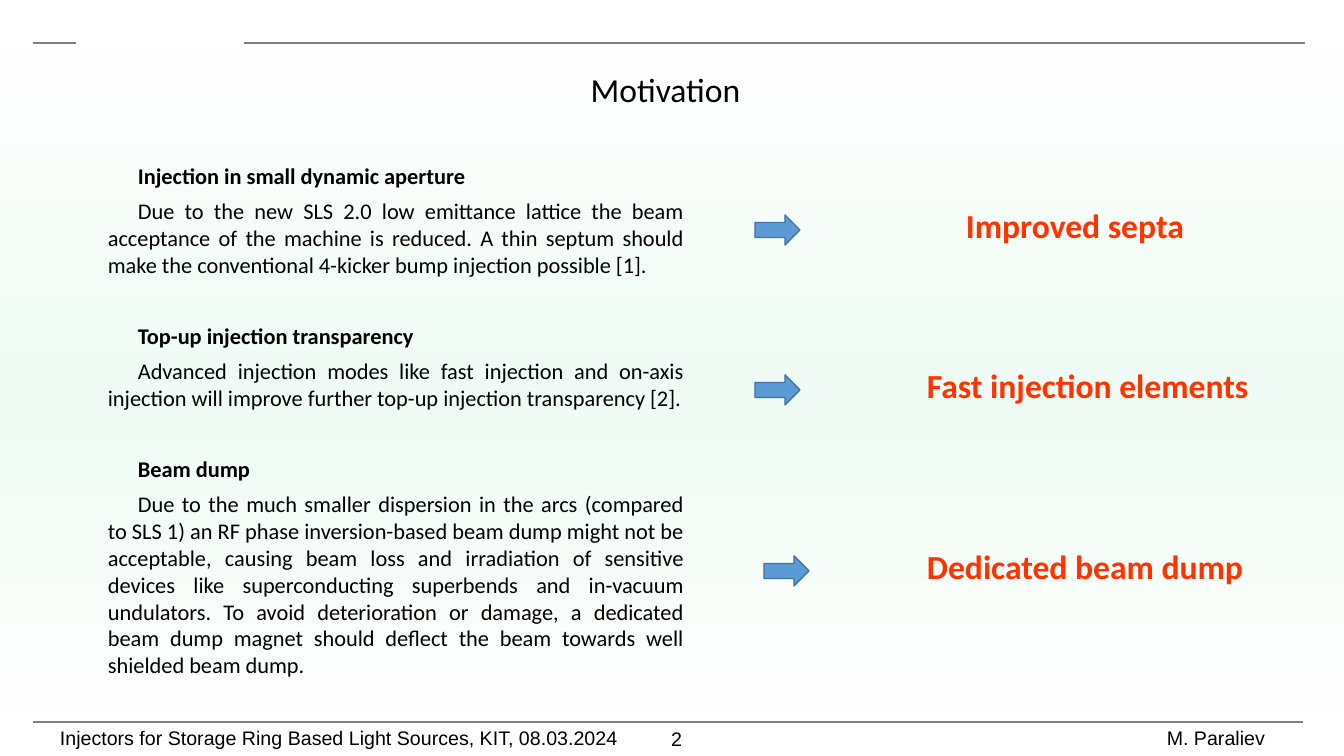
import copy

import pptx
import pptx.dml.color
import pptx.enum.shapes
import pptx.enum.text
import pptx.oxml
import pptx.oxml.ns
import pptx.util

SLIDE_WIDTH, SLIDE_HEIGHT = 1344, 756
EMU_PER_PX = 12192000 / SLIDE_WIDTH
INDENT = 30
SECTION_GAP = 31.5
PARAGRAPH_GAP = 6
ALIGN = pptx.enum.text.PP_ALIGN

SECTIONS = [
    ("Injection in small dynamic aperture",
     "Due to the new SLS 2.0 low emittance lattice the beam acceptance of the machine is reduced. "
     "A thin septum should make the conventional 4-kicker bump injection possible [1]."),
    ("Top-up injection transparency",
     "Advanced injection modes like fast injection and on-axis injection will improve further "
     "top-up injection transparency [2]."),
    ("Beam dump",
     "Due to the much smaller dispersion in the arcs (compared to SLS 1) an RF phase inversion-based "
     "beam dump might not be acceptable, causing beam loss and irradiation of sensitive devices like "
     "superconducting superbends and in-vacuum undulators. To avoid deterioration or damage, a "
     "dedicated beam dump magnet should deflect the beam towards well shielded beam dump."),
]
# Label, label left, arrow left, label top
SOLUTIONS = [
    ("Improved septa", 926, 755, 200),
    ("Fast injection elements", 887, 755, 360),
    ("Dedicated beam dump", 887, 764, 541),
]
RULES = [(33, 76, 43), (244, 1305, 43), (33, 1303, 722)]


def px(length):
    return pptx.util.Emu(round(length * EMU_PER_PX))


def color(hex_value):
    return pptx.dml.color.RGBColor.from_string(hex_value)


def set_background(slide, stops):
    """Fill the background from top to bottom with three (position, colour) stops."""
    fill = slide.background.fill
    fill.gradient()
    fill.gradient_angle = 270
    stop_list = slide.element.find(".//" + pptx.oxml.ns.qn("a:gsLst"))
    stop_list.append(copy.deepcopy(stop_list[0]))
    for stop, (position, hex_value) in zip(fill.gradient_stops, stops):
        stop.position = position
        stop.color.rgb = color(hex_value)


def add_text_box(slide, left, top, width, height):
    text_frame = slide.shapes.add_textbox(px(left), px(top), px(width), px(height)).text_frame
    text_frame.word_wrap = True
    return text_frame


def write(paragraph, text, size, font="Calibri", hex_value="000000", bold=False,
          align=ALIGN.LEFT, indent=0, space_before=0):
    paragraph.alignment = align
    paragraph.space_before = pptx.util.Pt(space_before)
    if indent:
        paragraph._p.get_or_add_pPr().set("indent", str(px(indent)))
    run = paragraph.add_run()
    run.text = text
    run.font.name = font
    run.font.size = pptx.util.Pt(size)
    run.font.bold = bold
    run.font.color.rgb = color(hex_value)


def add_text(slide, left, top, width, height, text, size, **text_format):
    text_frame = add_text_box(slide, left, top, width, height)
    write(text_frame.paragraphs[0], text, size, **text_format)


def add_sections(slide):
    text_frame = add_text_box(slide, 98, 157, 596, 531)
    body_format = {"size": 16, "align": ALIGN.JUSTIFY, "indent": INDENT}
    for index, (heading, body) in enumerate(SECTIONS):
        paragraph = text_frame.add_paragraph() if index else text_frame.paragraphs[0]
        write(paragraph, heading, bold=True, space_before=SECTION_GAP if index else 0, **body_format)
        write(text_frame.add_paragraph(), body, space_before=PARAGRAPH_GAP, **body_format)


def add_rule(slide, start, end, y):
    connector = slide.shapes.add_connector(
        pptx.enum.shapes.MSO_CONNECTOR.STRAIGHT, px(start), px(y), px(end), px(y))
    connector.line.color.rgb = color("808080")
    connector.line.width = pptx.util.Pt(1)
    connector._element.spPr.append(pptx.oxml.parse_xml(
        f"<a:effectLst {pptx.oxml.ns.nsdecls('a')}/>"))


def add_arrow(slide, left, top):
    arrow = slide.shapes.add_shape(
        pptx.enum.shapes.MSO_SHAPE.RIGHT_ARROW, px(left), px(top), px(45), px(30))
    arrow.shadow.inherit = False
    arrow.fill.solid()
    arrow.fill.fore_color.rgb = color("5B9BD5")
    arrow.line.color.rgb = color("43739E")
    arrow.line.width = pptx.util.Pt(1)


def main():
    presentation = pptx.Presentation()
    presentation.slide_width = px(SLIDE_WIDTH)
    presentation.slide_height = px(SLIDE_HEIGHT)
    slide = presentation.slides.add_slide(presentation.slide_layouts[6])
    set_background(slide, [(0, "FFFFFF"), (0.53, "EFFBF4"), (1, "FFFFFF")])

    for start, end, y in RULES:
        add_rule(slide, start, end, y)
    add_text(slide, 50, 721, 716, 34,
             "Injectors for Storage Ring Based Light Sources, KIT, 08.03.2024", 14, font="Arial")
    add_text(slide, 1040, 721, 235, 34, "M. Paraliev", 14, font="Arial", align=ALIGN.RIGHT)
    add_text(slide, 559, 722, 235, 34, "2", 14, font="Arial", align=ALIGN.CENTER)

    add_text(slide, 117, 64, 1097, 50, "Motivation", 24, align=ALIGN.CENTER)
    add_sections(slide)
    for label, label_left, arrow_left, top in SOLUTIONS:
        add_arrow(slide, arrow_left, top + 15)
        add_text(slide, label_left, top, 403, 50, label, 24, hex_value="FF3300", bold=True,
                 align=ALIGN.JUSTIFY, indent=INDENT)

    presentation.save("out.pptx")


if __name__ == "__main__":
    main()
